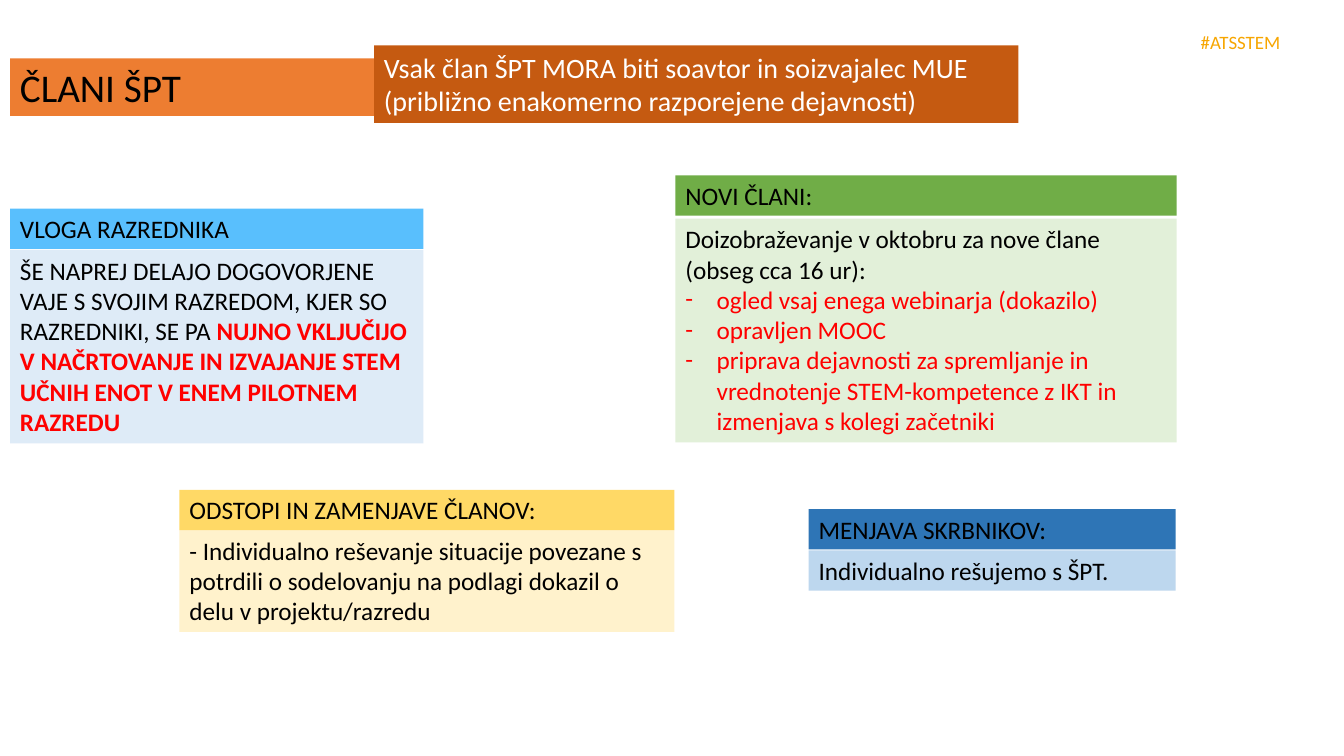
"""Build the slide on the roles and changes of ŠPT team members."""
from dataclasses import dataclass

from lxml import etree
from pptx import Presentation
from pptx.dml.color import RGBColor
from pptx.enum.shapes import MSO_SHAPE
from pptx.enum.text import MSO_ANCHOR, MSO_AUTO_SIZE, PP_ALIGN
from pptx.oxml.ns import qn
from pptx.slide import Slide
from pptx.text.text import TextFrame, _Paragraph
from pptx.util import Inches, Pt

RECTANGLE = MSO_SHAPE.RECTANGLE
TOP = MSO_ANCHOR.TOP
LEFT = PP_ALIGN.LEFT
GROW = MSO_AUTO_SIZE.SHAPE_TO_FIT_TEXT

BLACK = RGBColor(0x00, 0x00, 0x00)
WHITE = RGBColor(0xFF, 0xFF, 0xFF)
RED = RGBColor(0xFF, 0x00, 0x00)
AMBER = RGBColor(0xF7, 0xA6, 0x01)
ORANGE = RGBColor(0xED, 0x7D, 0x31)
RUST = RGBColor(0xC5, 0x5A, 0x11)
GREEN = RGBColor(0x70, 0xAD, 0x47)
PALE_GREEN = RGBColor(0xE2, 0xF0, 0xD9)
YELLOW = RGBColor(0xFF, 0xD9, 0x66)
PALE_YELLOW = RGBColor(0xFF, 0xF2, 0xCC)
SKY = RGBColor(0x59, 0xBF, 0xFD)
PALE_SKY = RGBColor(0xDE, 0xEB, 0xF7)
BLUE = RGBColor(0x2E, 0x75, 0xB6)
PALE_BLUE = RGBColor(0xBD, 0xD7, 0xEE)

FONT = "Calibri"
HEADING_HEIGHT = 0.4
BULLET_INDENT = 0.31


@dataclass(frozen=True)
class Span:
    text: str
    color: RGBColor = BLACK
    bold: bool = False


@dataclass(frozen=True)
class Line:
    spans: tuple[Span, ...]
    bullet: bool = False


@dataclass(frozen=True)
class Panel:
    left: float
    top: float
    width: float
    height: float
    fill: RGBColor
    lines: tuple[Line, ...]
    size: float = 18


@dataclass(frozen=True)
class Card:
    left: float
    top: float
    width: float
    body_top: float
    body_height: float
    heading: str
    heading_fill: RGBColor
    body_fill: RGBColor
    lines: tuple[Line, ...]


def plain(text: str, color: RGBColor = BLACK) -> Line:
    return Line((Span(text, color),))


def item(text: str) -> Line:
    return Line((Span(text, RED),), bullet=True)


BANNERS = (
    Panel(0.1, 0.58, 9.63, 0.57, ORANGE, (plain("ČLANI ŠPT"),), 28),
    Panel(3.71, 0.45, 6.39, 0.77, RUST, (plain(
        "Vsak član ŠPT MORA biti soavtor in soizvajalec MUE "
        "(približno enakomerno razporejene dejavnosti)", WHITE),), 20),
)

CARDS = (
    Card(6.7, 1.74, 4.97, 2.17, 2.22, "NOVI ČLANI:", GREEN, PALE_GREEN, (
        plain("Doizobraževanje v oktobru za nove člane (obseg cca 16 ur):"),
        item("ogled vsaj enega webinarja (dokazilo)"),
        item("opravljen MOOC"),
        item("priprava dejavnosti za spremljanje in vrednotenje "
             "STEM-kompetence z IKT in izmenjava s kolegi začetniki"))),
    Card(0.1, 2.07, 4.1, 2.48, 1.92, "VLOGA RAZREDNIKA", SKY, PALE_SKY, (
        Line((
            Span("ŠE NAPREJ DELAJO DOGOVORJENE VAJE S SVOJIM RAZREDOM, "
                 "KJER SO RAZREDNIKI, SE PA "),
            Span("NUJNO VKLJUČIJO V NAČRTOVANJE IN IZVAJANJE STEM UČNIH ENOT "
                 "V ENEM PILOTNEM RAZREDU", RED, True))),)),
    Card(1.78, 4.86, 4.91, 5.26, 1.01, "ODSTOPI IN ZAMENJAVE ČLANOV:",
         YELLOW, PALE_YELLOW, (plain(
             "- Individualno reševanje situacije povezane s potrdili o "
             "sodelovanju na podlagi dokazil o delu v projektu/razredu"),)),
    Card(8.02, 5.05, 3.64, 5.46, 0.4, "MENJAVA SKRBNIKOV:", BLUE, PALE_BLUE,
         (plain("Individualno rešujemo s ŠPT."),)),
)


def set_values(target: object, values: dict[str, object]) -> None:
    for name, value in values.items():
        setattr(target, name, value)


def add_bullet(paragraph: _Paragraph) -> None:
    properties = paragraph._p.get_or_add_pPr()
    properties.set("marL", str(Inches(BULLET_INDENT)))
    properties.set("indent", str(-Inches(BULLET_INDENT)))
    etree.SubElement(properties, qn("a:buFont")).set("typeface", FONT)
    etree.SubElement(properties, qn("a:buChar")).set("char", "-")


def write_lines(frame: TextFrame, lines: tuple[Line, ...], size: float,
                wrap: bool = True) -> None:
    set_values(frame, {"word_wrap": wrap, "auto_size": GROW,
                       "vertical_anchor": TOP})
    for index, line in enumerate(lines):
        paragraph = frame.add_paragraph() if index else frame.paragraphs[0]
        paragraph.alignment = LEFT
        if line.bullet:
            add_bullet(paragraph)
        for span in line.spans:
            run = paragraph.add_run()
            run.text = span.text
            set_values(run.font, {"name": FONT, "size": Pt(size),
                                  "bold": span.bold})
            run.font.color.rgb = span.color


def draw_panel(page: Slide, panel: Panel) -> None:
    box = page.shapes.add_shape(
        RECTANGLE, Inches(panel.left), Inches(panel.top),
        Inches(panel.width), Inches(panel.height))
    box.shadow.inherit = False
    box.fill.solid()
    box.fill.fore_color.rgb = panel.fill
    box.line.fill.background()
    write_lines(box.text_frame, panel.lines, panel.size)


def draw_card(page: Slide, card: Card) -> None:
    draw_panel(page, Panel(card.left, card.body_top, card.width,
                           card.body_height, card.body_fill, card.lines))
    draw_panel(page, Panel(card.left, card.top, card.width, HEADING_HEIGHT,
                           card.heading_fill, (plain(card.heading),)))


def draw_hashtag(page: Slide) -> None:
    box = page.shapes.add_textbox(
        Inches(11.81), Inches(0.25), Inches(0.99), Inches(0.33))
    write_lines(box.text_frame, (plain("#ATSSTEM", AMBER),), 13.5, wrap=False)


def main() -> None:
    deck = Presentation()
    set_values(deck, {"slide_width": Inches(13.33),
                      "slide_height": Inches(7.5)})
    page = deck.slides.add_slide(deck.slide_layouts[6])
    draw_hashtag(page)
    for banner in BANNERS:
        draw_panel(page, banner)
    for card in CARDS:
        draw_card(page, card)
    deck.save("out.pptx")


if __name__ == "__main__":
    main()
